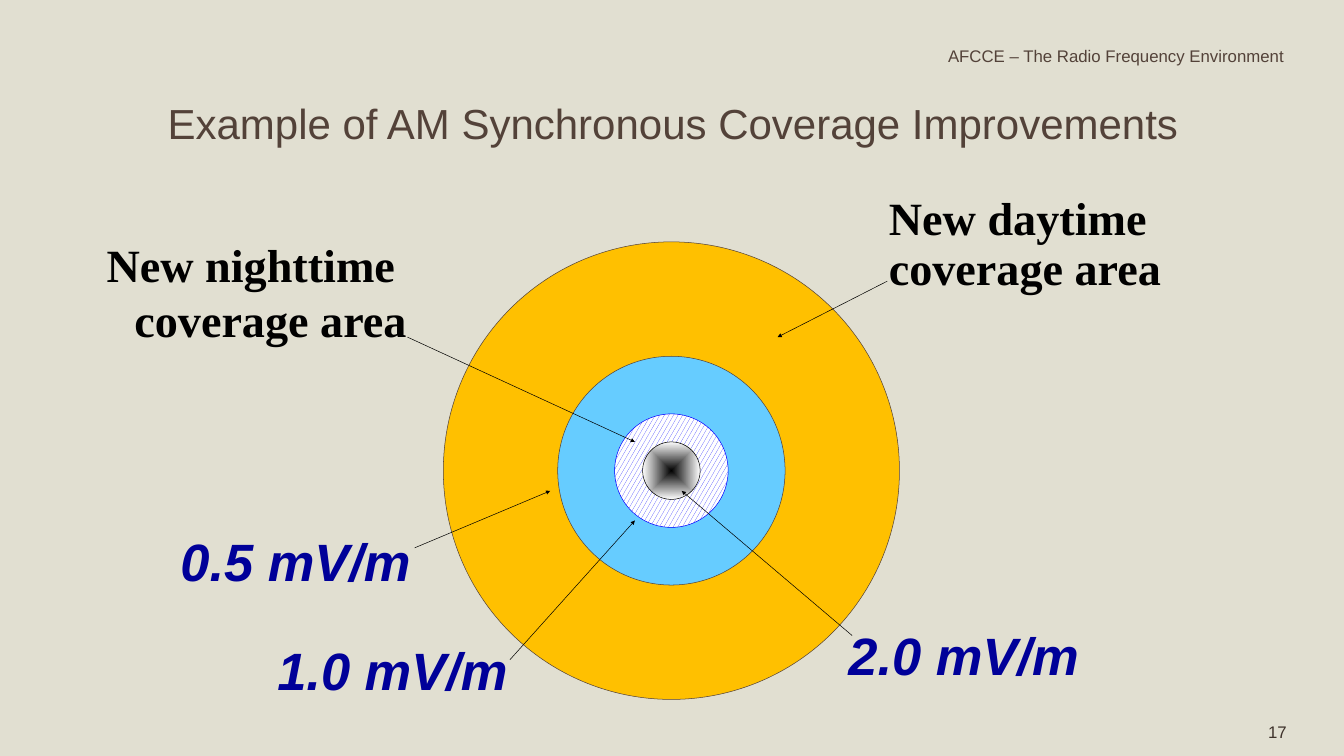
from lxml.etree import SubElement
from pptx import Presentation
from pptx.dml.color import RGBColor
from pptx.enum.dml import MSO_PATTERN
from pptx.enum.shapes import MSO_CONNECTOR, MSO_SHAPE
from pptx.enum.text import MSO_ANCHOR, PP_ALIGN
from pptx.oxml.ns import qn
from pptx.util import Cm, Pt

COLORS = {
    "background": "E1DFD1",
    "brown": "534239",
    "dark_brown": "3E322B",
    "daytime": "FFC000",
    "existing": "66CCFF",
    "blue": "0000FF",
    "navy": "000099",
    "black": "000000",
    "white": "FFFFFF",
}


def color(name):
    return RGBColor.from_string(COLORS[name])


def add_text(slide, text, box, *, size, ink, font="Arial", bold=False, italic=False,
             align=PP_ALIGN.CENTER, anchor=MSO_ANCHOR.TOP, inset=None, wrap=True,
             line_spacing=None):
    frame = slide.shapes.add_textbox(*map(Cm, box)).text_frame
    frame.word_wrap = wrap
    frame.vertical_anchor = anchor
    if inset is not None:
        frame.margin_left = frame.margin_right = Cm(inset)
        frame.margin_top = frame.margin_bottom = Cm(inset)
    paragraph = frame.paragraphs[0]
    paragraph.alignment = align
    if line_spacing:
        paragraph.line_spacing = line_spacing
    for index, line in enumerate(text.split("\n")):
        if index:
            paragraph.add_line_break()
        run = paragraph.add_run()
        run.text = line
        run.font.name = font
        run.font.size = Pt(size)
        run.font.bold = bold
        run.font.italic = italic
        run.font.color.rgb = color(ink)


def add_arrow(slide, start, end):
    arrow = slide.shapes.add_connector(MSO_CONNECTOR.STRAIGHT, *map(Cm, start + end))
    arrow.line.color.rgb = color("black")
    arrow.line.width = Pt(0.75)
    outline = arrow.line._get_or_add_ln()
    SubElement(outline, qn("a:tailEnd"), type="triangle")
    SubElement(arrow._element.spPr, qn("a:effectLst"))


def add_contour(slide, center, width, height, outline):
    x, y = center
    contour = slide.shapes.add_shape(
        MSO_SHAPE.OVAL, Cm(x - width / 2), Cm(y - height / 2), Cm(width), Cm(height))
    contour.shadow.inherit = False
    contour.line.color.rgb = color(outline)
    contour.line.width = Pt(0.75)
    return contour.fill


def fill_with_glow(fill, contour_properties):
    fill.gradient()
    for stop, position, name in zip(fill.gradient_stops, (0, 1), ("black", "white")):
        stop.position = position
        stop.color.rgb = color(name)
    gradient = contour_properties.find(qn("a:gradFill"))
    gradient.remove(gradient.find(qn("a:lin")))
    glow = SubElement(gradient, qn("a:path"), path="shape")
    SubElement(glow, qn("a:fillToRect"), l="50000", t="50000", r="50000", b="50000")


def draw_contours(slide, center):
    for width, height, name in ((22.99, 23.06, "daytime"), (11.46, 11.53, "existing")):
        fill = add_contour(slide, center, width, height, "brown")
        fill.solid()
        fill.fore_color.rgb = color(name)

    nighttime = add_contour(slide, center, 5.72, 5.72, "blue")
    nighttime.patterned()
    nighttime.pattern = MSO_PATTERN.SMALL_CONFETTI
    nighttime.fore_color.rgb = color("blue")
    nighttime.back_color.rgb = color("white")

    core = add_contour(slide, center, 2.9, 2.9, "black")
    fill_with_glow(core, slide.shapes[-1]._element.spPr)


def draw_coverage(slide, box):
    left, top, _, _ = box

    def place(x, y, *size):
        return (left + x, top + y, *size)

    draw_contours(slide, place(29.73, 13.97))

    field_style = dict(size=75, ink="navy", bold=True, italic=True)
    area_style = dict(size=66, ink="black", bold=True, font="Times New Roman")
    callouts = (
        ("2.0 mV/m", (37.26, 21.54, 14.4, 2.9), (38.84, 22.28), (30.25, 14.99),
         field_style),
        ("1.0 mV/m", (7.57, 22.28, 16.21, 3.76), (21.59, 23.5), (27.89, 16.48),
         field_style),
        ("0.5 mV/m", (2.79, 16.79, 16, 2.9), (16.79, 17.86), (23.62, 14.99),
         field_style),
        ("New daytime \ncoverage area", (40.44, 0, 15.19, 5.64), (40.61, 4.42),
         (35.08, 7.24), dict(area_style, align=PP_ALIGN.LEFT, line_spacing=0.9)),
        ("New nighttime \ncoverage area", (0, 2.01, 16.64, 5.89), (16.43, 7.24),
         (27.89, 12.52), dict(area_style, align=PP_ALIGN.RIGHT)),
    )
    for text, label_box, start, end, style in callouts:
        add_text(slide, text, place(*label_box), **style)
        add_arrow(slide, place(*start), place(*end))


def draw_heading(slide, box):
    left, top, width, _ = box
    style = dict(ink="brown", anchor=MSO_ANCHOR.MIDDLE, inset=0.15, wrap=False)
    add_text(slide, "AFCCE – The Radio Frequency Environment",
             (left + width - 17.45, top, 17.45, 1.32), size=24, **style)
    add_text(slide, "Example of AM Synchronous Coverage Improvements",
             (left, top + 2.64, 51.84, 2.84), size=60, **style)


def draw_page_number(slide, box):
    add_text(slide, "17", box, size=24, ink="dark_brown", inset=0.15, wrap=False)


def main():
    presentation = Presentation()
    presentation.slide_width = Cm(67.74)
    presentation.slide_height = Cm(38.1)
    slide = presentation.slides.add_slide(presentation.slide_layouts[6])
    slide.background.fill.solid()
    slide.background.fill.fore_color.rgb = color("background")
    draw_heading(slide, (8, 2.13, 56.97, 5.48))
    draw_coverage(slide, (4.11, 9.75, 55.63, 26.04))
    draw_page_number(slide, (63.47, 36.2, 1.83, 1.32))
    presentation.save("out.pptx")


if __name__ == "__main__":
    main()
